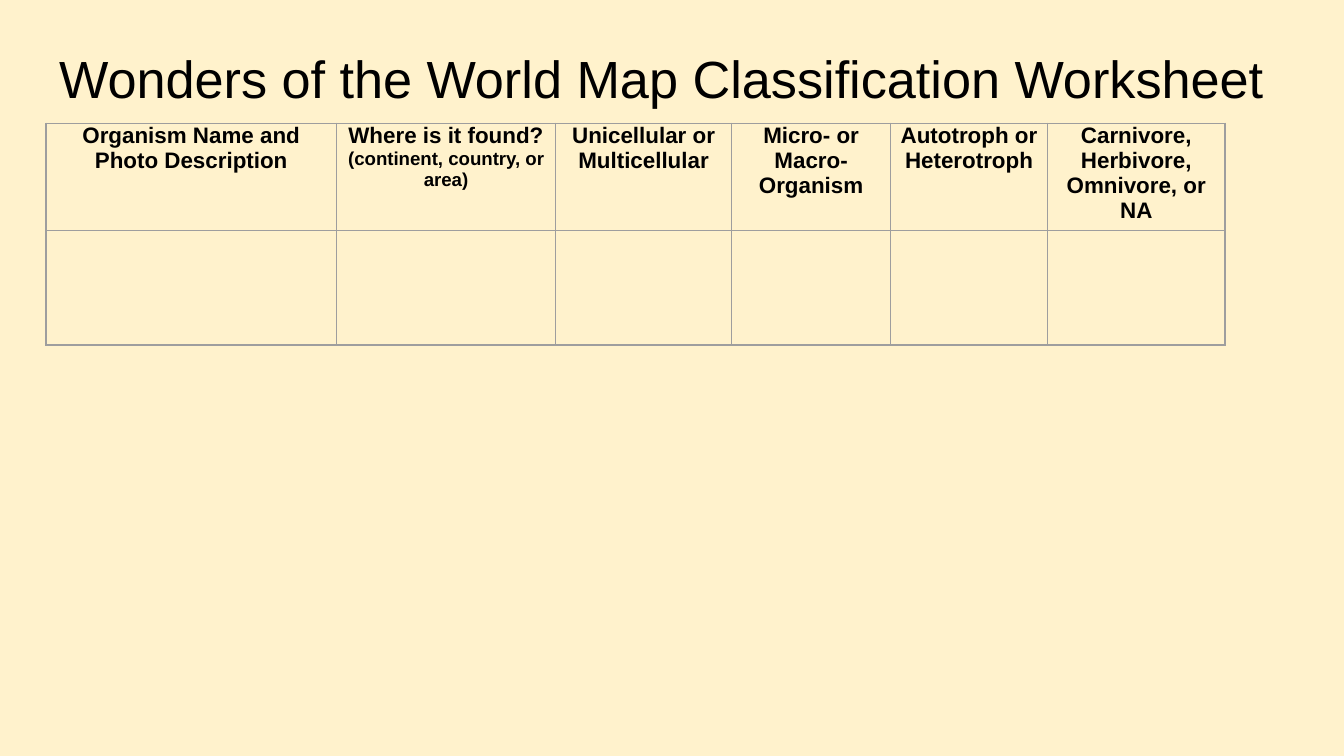
from lxml.etree import SubElement
from pptx import Presentation
from pptx.dml.color import RGBColor
from pptx.enum.text import MSO_ANCHOR, PP_ALIGN
from pptx.oxml.ns import qn
from pptx.util import Cm, Pt

COLORS = {"background": "FFF2CC", "text": "000000", "border": "9E9E9E"}
FONT = "Arial"
TITLE = "Wonders of the World Map Classification Worksheet"
COLUMNS = [
    (5.49, [("Organism Name and", 12), ("Photo Description", 12)]),
    (4.14, [("Where is it found?", 12), ("(continent, country, or area)", 10)]),
    (3.33, [("Unicellular or Multicellular", 12)]),
    (3.0, [("Micro- or Macro- Organism", 12)]),
    (2.97, [("Autotroph or Heterotroph", 12)]),
    (3.35, [("Carnivore, Herbivore, Omnivore, or NA", 12)]),
]
ROW_HEIGHTS = [1.55, 2.16]


def format_paragraph(paragraph, size, bold=False):
    """Apply the worksheet font to every run of a paragraph."""
    for run in paragraph.runs:
        run.font.name = FONT
        run.font.size = Pt(size)
        run.font.bold = bold
        run.font.color.rgb = RGBColor.from_string(COLORS["text"])


def add_title(slide, left, top, width, height):
    """Place the worksheet title in the given box."""
    text_frame = slide.shapes.add_textbox(left, top, width, height).text_frame
    text_frame.word_wrap = True
    text_frame.vertical_anchor = MSO_ANCHOR.TOP
    text_frame.margin_top = Cm(0.37)
    text_frame.text = TITLE
    format_paragraph(text_frame.paragraphs[0], 28)


def style_cell(cell):
    """Give a cell no fill, narrow margins and a thin border on all sides."""
    cell.fill.background()
    cell.margin_left = cell.margin_right = Cm(0.18)
    cell.margin_top = cell.margin_bottom = Cm(0)
    properties = cell._tc.get_or_add_tcPr()
    for index, side in enumerate(("a:lnL", "a:lnR", "a:lnT", "a:lnB")):
        line = SubElement(properties, qn(side), w=str(Pt(0.75)))
        fill = SubElement(line, qn("a:solidFill"))
        SubElement(fill, qn("a:srgbClr"), val=COLORS["border"])
        properties.insert(index, line)


def fill_heading(cell, lines):
    """Write the centred bold heading lines into a cell."""
    text_frame = cell.text_frame
    text_frame.text = "\n".join(text for text, size in lines)
    for paragraph, (text, size) in zip(text_frame.paragraphs, lines):
        paragraph.alignment = PP_ALIGN.CENTER
        format_paragraph(paragraph, size, bold=True)


def add_worksheet(slide, left, top, width, height):
    """Place the classification table in the given box."""
    shape = slide.shapes.add_table(len(ROW_HEIGHTS), len(COLUMNS), left, top, width, height)
    table = shape.table
    table.first_row = False
    table.horz_banding = False
    for row, row_height in zip(table.rows, ROW_HEIGHTS):
        row.height = Cm(row_height)
    for index, (column_width, lines) in enumerate(COLUMNS):
        table.columns[index].width = Cm(column_width)
        fill_heading(table.cell(0, index), lines)
    for cell in table.iter_cells():
        style_cell(cell)


def main():
    """Build the worksheet slide and save it."""
    presentation = Presentation()
    presentation.slide_width = Cm(25.4)
    presentation.slide_height = Cm(14.29)
    slide = presentation.slides.add_slide(presentation.slide_layouts[6])
    background = slide.background.fill
    background.solid()
    background.fore_color.rgb = RGBColor.from_string(COLORS["background"])
    add_title(slide, Cm(0.87), Cm(0.5), Cm(23.67), Cm(1.6))
    table_width = sum(width for width, lines in COLUMNS)
    add_worksheet(slide, Cm(0.87), Cm(2.33), Cm(table_width), Cm(sum(ROW_HEIGHTS)))
    presentation.save("out.pptx")


if __name__ == "__main__":
    main()
